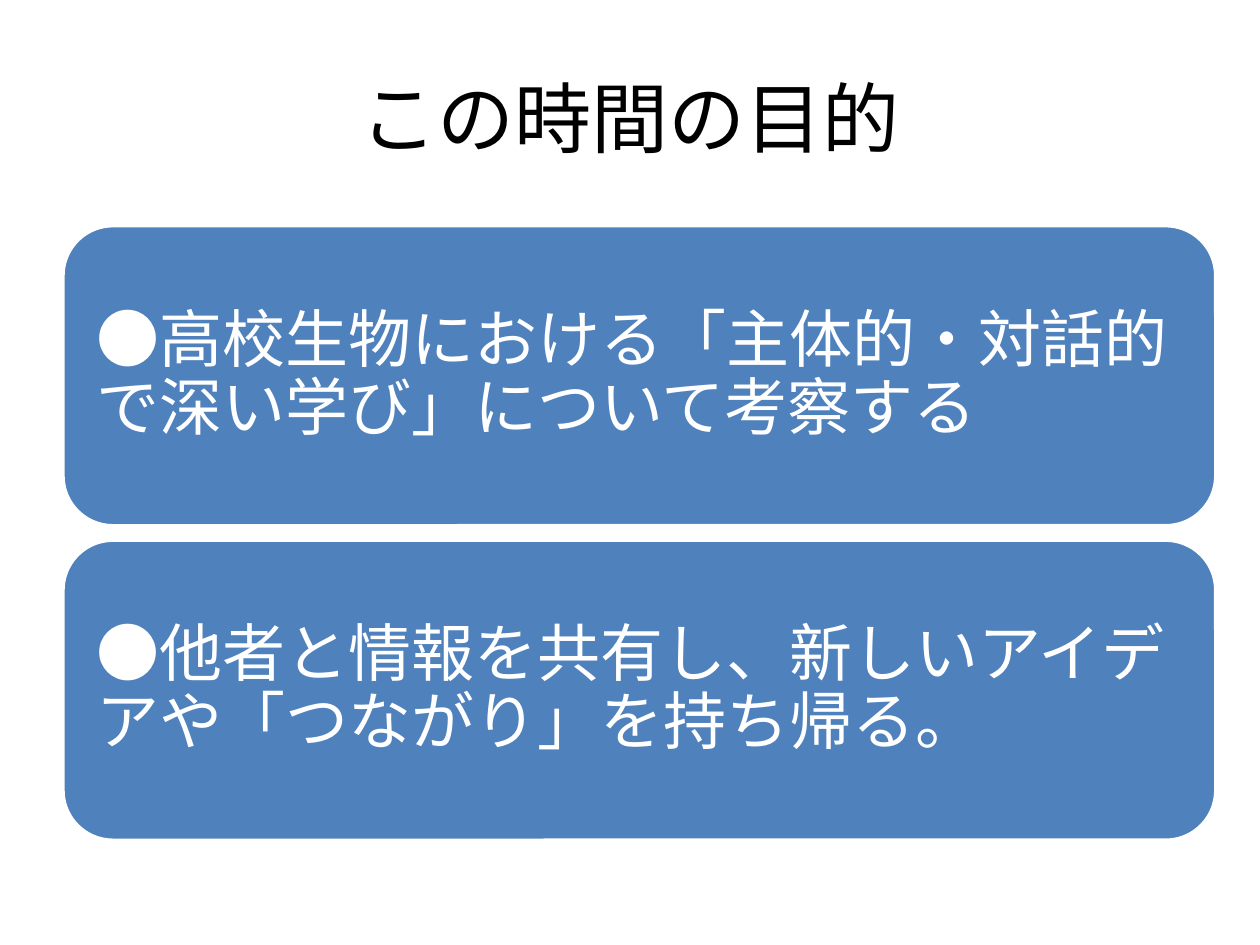
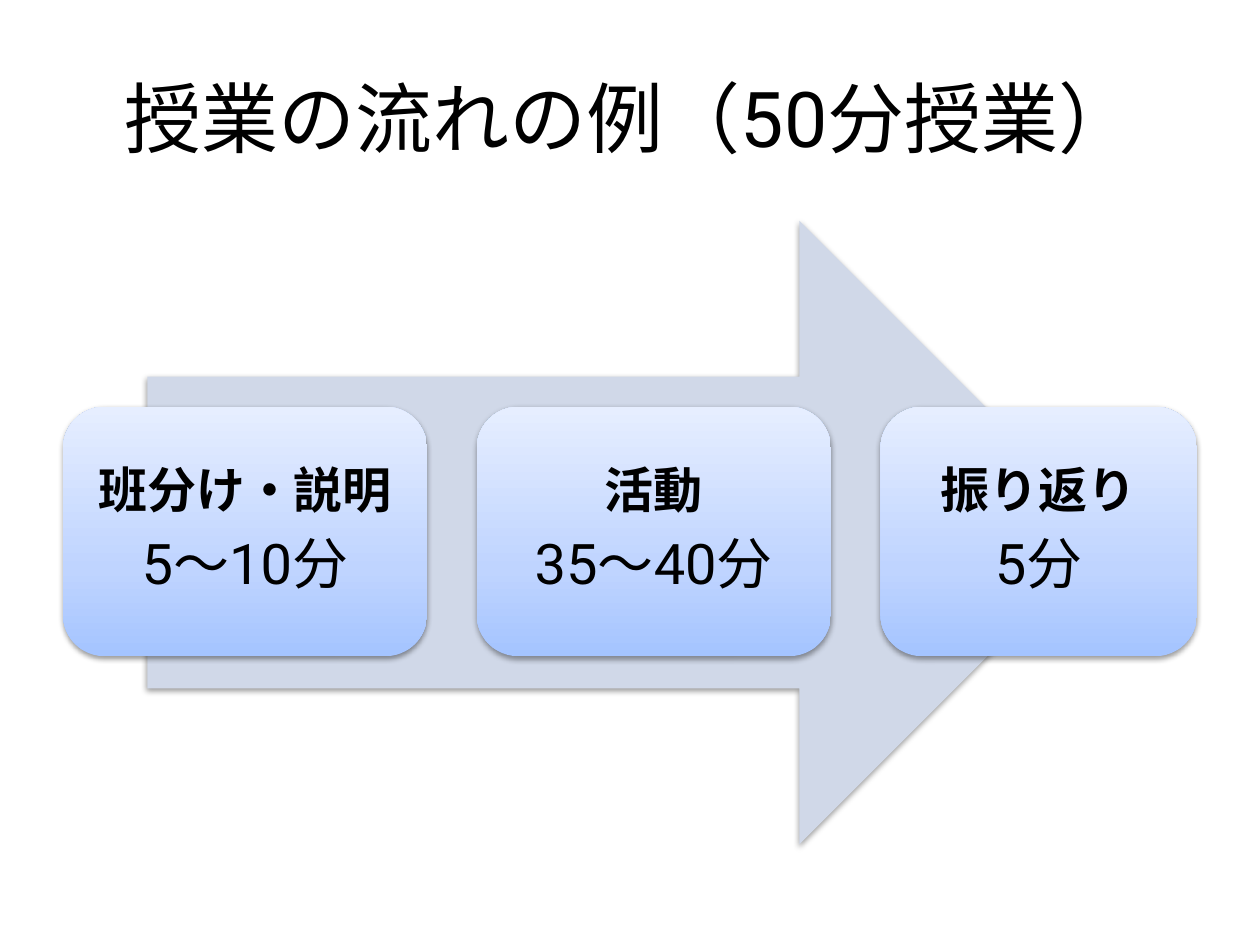
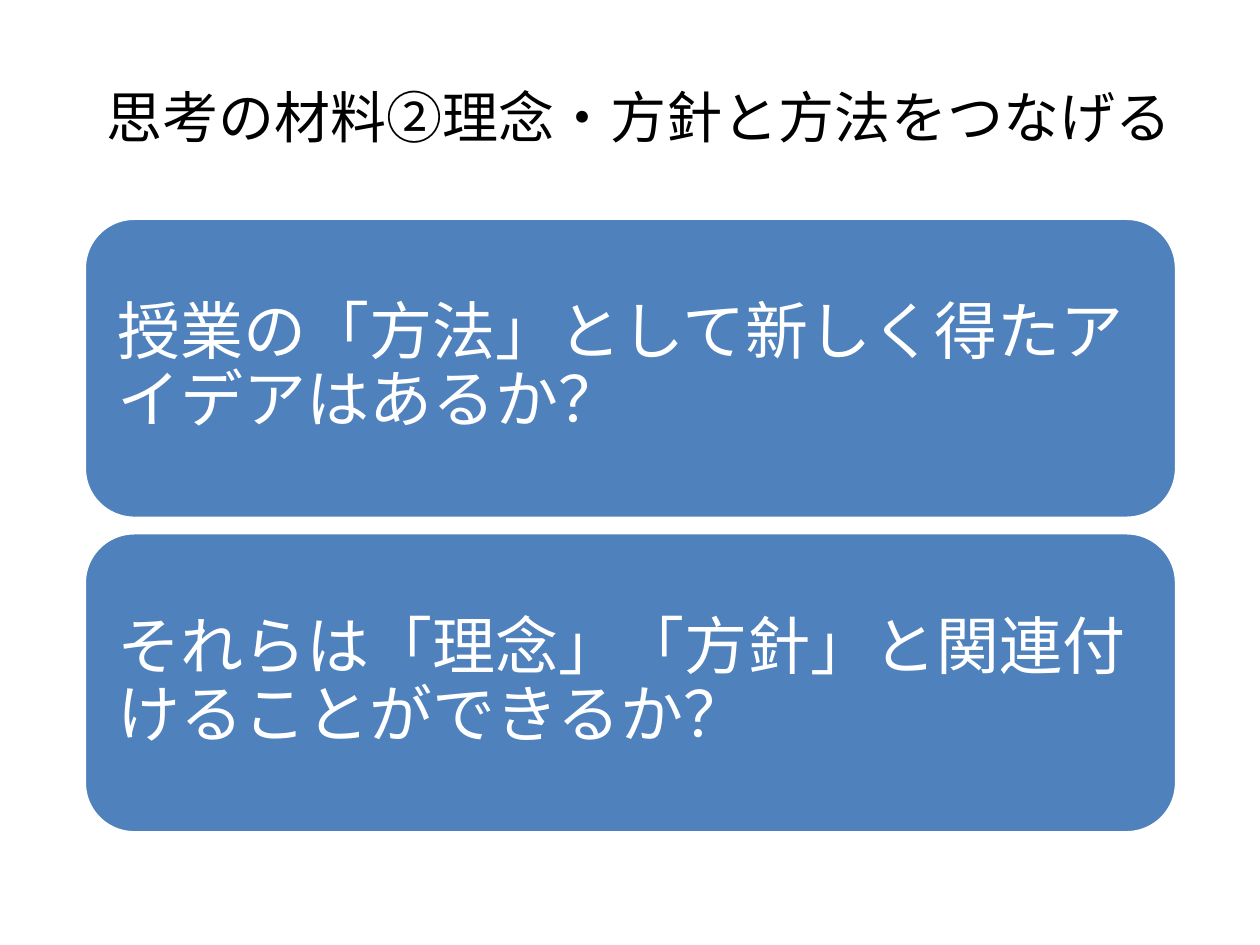
from copy import deepcopy

from lxml import etree
from pptx import Presentation
from pptx.dml.color import RGBColor
from pptx.enum.shapes import MSO_SHAPE
from pptx.enum.text import MSO_ANCHOR, MSO_AUTO_SIZE, PP_ALIGN
from pptx.oxml.ns import qn
from pptx.util import Cm, Pt

ROUNDED = MSO_SHAPE.ROUNDED_RECTANGLE
RIGHT_ARROW = MSO_SHAPE.RIGHT_ARROW
LEFT, CENTER = PP_ALIGN.LEFT, PP_ALIGN.CENTER
MIDDLE = MSO_ANCHOR.MIDDLE
NO_FIT = MSO_AUTO_SIZE.NONE
TITLE_ONLY = 5

FONT = "Roboto"
BLACK, WHITE = "000000", "FFFFFF"
PANEL_BLUE, ARROW_BLUE = "4F81BD", "D0D8E8"
STEP_GRADIENT = [(0, "A4C4FF"), (0.35, "BFD4FF"), (1, "E6EEFF")]

PANEL_HEIGHT, PANEL_GAP = 6.05, 0.29
STEP_TOP, STEP_HEIGHT, STEP_GAP = 8.2, 5.03, 1
MARGIN = 1.27


def rgb(value):
    """Return the colour for a hex string."""
    return RGBColor.from_string(value)


def write(paragraph, text, size, color=BLACK, bold=False, align=CENTER,
          line_spacing=None, after=0):
    """Put formatted text into a paragraph."""
    paragraph.alignment = align
    paragraph.line_spacing = line_spacing
    paragraph.space_after = Pt(after * size)
    run = paragraph.add_run()
    run.text = text
    run.font.name = FONT
    run.font.size = Pt(size)
    run.font.bold = bold
    run.font.color.rgb = rgb(color)


def set_frame(frame, inset):
    """Centre a text frame vertically, wrap it and set equal insets."""
    frame.word_wrap = True
    frame.vertical_anchor = MIDDLE
    frame.margin_left = frame.margin_right = Cm(inset)
    frame.margin_top = frame.margin_bottom = Cm(inset)


def add_titled_slide(deck, heading, size=44, width=22.86):
    """Add a slide with a centred heading."""
    slide = deck.slides.add_slide(deck.slide_layouts[TITLE_ONLY])
    title = slide.shapes.title
    title.left, title.top = Cm(MARGIN), Cm(0.76)
    title.width, title.height = Cm(width), Cm(3.18)
    title.text_frame.vertical_anchor = MIDDLE
    title.text_frame.auto_size = NO_FIT
    write(title.text_frame.paragraphs[0], heading, size)
    return slide


def add_block(slide, kind, left, top, width, height):
    """Add a preset shape without line or inherited shadow."""
    block = slide.shapes.add_shape(kind, Cm(left), Cm(top), Cm(width), Cm(height))
    block.shadow.inherit = False
    block.line.fill.background()
    return block


def fill_solid(block, color):
    """Fill a shape with one colour."""
    block.fill.solid()
    block.fill.fore_color.rgb = rgb(color)


def fill_gradient(block, stops):
    """Fill a shape with colour stops running from bottom to top."""
    block.fill.gradient()
    block.fill.gradient_angle = 90
    stop_list = block.element.spPr.find(".//" + qn("a:gsLst"))
    while len(stop_list) < len(stops):
        stop_list.append(deepcopy(stop_list[0]))
    for stop, (position, color) in zip(block.fill.gradient_stops, stops):
        stop.position = position
        stop.color.rgb = rgb(color)


def add_soft_shadow(block):
    """Give a shape a faint shadow below it."""
    effects = block.element.spPr.find(qn("a:effectLst"))
    shadow = etree.SubElement(effects, qn("a:outerShdw"), blurRad="40000",
                              dist="20000", dir="5400000", rotWithShape="0")
    color = etree.SubElement(shadow, qn("a:srgbClr"), val=BLACK)
    etree.SubElement(color, qn("a:alpha"), val="38000")


def add_panels(slide, statements, left, top, width):
    """Stack one blue panel per statement."""
    for row, statement in enumerate(statements):
        panel_top = top + row * (PANEL_HEIGHT + PANEL_GAP)
        panel = add_block(slide, ROUNDED, left, panel_top, width, PANEL_HEIGHT)
        fill_solid(panel, PANEL_BLUE)
        panel.line.color.rgb = rgb(WHITE)
        panel.line.width = Pt(2)
        set_frame(panel.text_frame, 0.38)
        write(panel.text_frame.paragraphs[0], statement, 36, color=WHITE,
              align=LEFT, line_spacing=0.9, after=0.35)


def add_lesson_flow(slide, steps):
    """Draw the lesson steps in a row over a wide arrow."""
    arrow = add_block(slide, RIGHT_ARROW, 2.97, 4.45, 19.43, 12.57)
    fill_solid(arrow, ARROW_BLUE)
    add_soft_shadow(arrow)
    left = MARGIN
    for activity, minutes, width in steps:
        step = add_block(slide, ROUNDED, left, STEP_TOP, width, STEP_HEIGHT)
        fill_gradient(step, STEP_GRADIENT)
        add_soft_shadow(step)
        frame = step.text_frame
        set_frame(frame, 0.3)
        write(frame.paragraphs[0], activity, 28, bold=True,
              line_spacing=0.9, after=0.35)
        write(frame.add_paragraph(), minutes, 32, line_spacing=0.9, after=0.35)
        left += width + STEP_GAP


def main():
    """Build the three slides and save them."""
    deck = Presentation()
    deck.slide_width, deck.slide_height = Cm(25.4), Cm(19.05)

    purpose = add_titled_slide(deck, "この時間の目的")
    add_panels(purpose, [
        "●高校生物における「主体的・対話的で深い学び」について考察する",
        "●他者と情報を共有し、新しいアイデアや「つながり」を持ち帰る。",
    ], left=MARGIN, top=4.55, width=23.24)

    lesson = add_titled_slide(deck, "授業の流れの例（50分授業）")
    add_lesson_flow(lesson, [
        ("班分け・説明", "5～10分", 7.34),
        ("活動", "35～40分", 7.14),
        ("振り返り", "5分", 6.38),
    ])

    material = add_titled_slide(deck, "思考の材料②理念・方針と方法をつなげる",
                                size=32, width=23.24)
    add_panels(material, [
        "授業の「方法」として新しく得たアイデアはあるか？",
        "それらは「理念」「方針」と関連付けることができるか？",
    ], left=1.7, top=4.4, width=22.02)

    deck.save("out.pptx")


if __name__ == "__main__":
    main()
